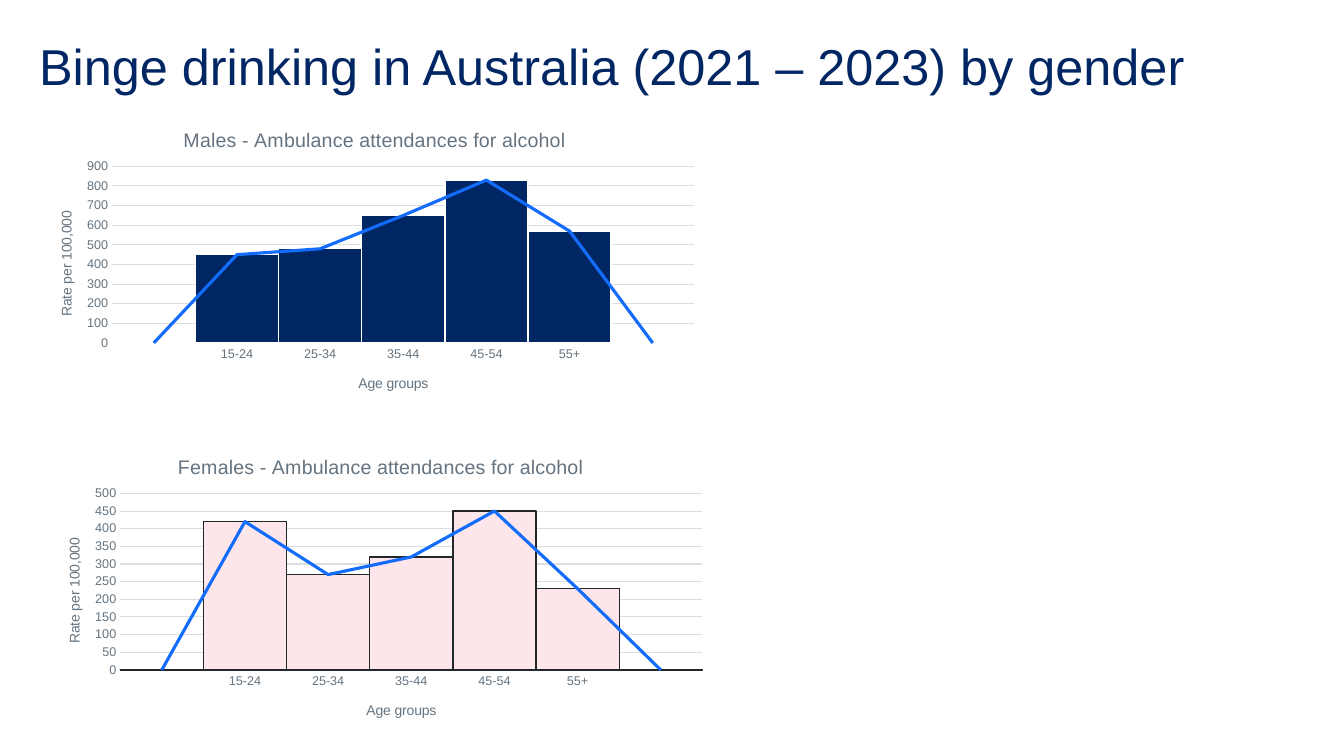
"""Slide with two histograms, each with its frequency polygon, of alcohol attendances by gender."""
from lxml.etree import SubElement
from pptx import Presentation
from pptx.chart.data import CategoryChartData
from pptx.dml.color import RGBColor
from pptx.enum.chart import XL_CHART_TYPE as ChartType, XL_MARKER_STYLE as Marker
from pptx.enum.chart import XL_TICK_MARK as Tick
from pptx.enum.text import MSO_ANCHOR as Anchor
from pptx.oxml.ns import qn
from pptx.util import Pt

PX = 9144000 / 1008
NAVY = RGBColor(0x00, 0x26, 0x64)
BLUE = RGBColor(0x14, 0x6C, 0xFD)
PINK = RGBColor(0xFD, 0xE6, 0xEA)
INK = RGBColor(0x22, 0x27, 0x2B)
GREY = RGBColor(0x65, 0x74, 0x80)
RULE = RGBColor(0xDB, 0xDF, 0xE2)
WHITE = RGBColor(0xFF, 0xFF, 0xFF)
FONT = "Arial"
AGE_GROUPS = ["", "15-24", "25-34", "35-44", "45-54", "55+", ""]


def write_text(frame, text, size=10, color=GREY, spacing=None):
    frame.text = text
    paragraph = frame.paragraphs[0]
    paragraph.line_spacing = spacing
    font = paragraph.runs[0].font
    font.name, font.size, font.bold = FONT, Pt(size), False
    font.color.rgb = color


def place(parent, **fractions):
    layout = parent.find(qn("c:layout"))
    if layout is None:
        layout = SubElement(parent, qn("c:layout"))
        parent.insert(0, layout)
    manual = SubElement(layout, qn("c:manualLayout"))
    if "w" in fractions:
        SubElement(manual, qn("c:layoutTarget"), val="inner")
    for side in "xy":
        SubElement(manual, qn(f"c:{side}Mode"), val="edge")
    for side, fraction in fractions.items():
        SubElement(manual, qn(f"c:{side}"), val=str(fraction))


deck = Presentation()
deck.slide_width, deck.slide_height = round(1344 * PX), round(756 * PX)
slide = deck.slides.add_slide(deck.slide_layouts[6])

heading = slide.shapes.add_textbox(*(round(n * PX) for n in (39, 39, 1266, 60))).text_frame
heading.word_wrap = True
heading.vertical_anchor = Anchor.MIDDLE
heading.margin_left = heading.margin_right = heading.margin_top = heading.margin_bottom = 0
write_text(heading, "Binge drinking in Australia (2021 – 2023) by gender", size=36, color=NAVY, spacing=0.9)

genders = [
    ("Males", (31, 109, 677, 302), [0, 450, 480, 650, 830, 570, 0], 900, 100, NAVY, WHITE, 0.22),
    ("Females", (39, 436, 677, 302), [0, 420, 270, 320, 450, 230, 0], 500, 50, PINK, INK, 0.2),
]
for gender, box, rates, top_rate, step, fill, outline, title_x in genders:
    data = CategoryChartData()
    data.categories = AGE_GROUPS
    for name in ("Series 1", "Series 2"):
        data.add_series(name, rates)
    chart = slide.shapes.add_chart(
        ChartType.COLUMN_CLUSTERED, *(round(n * PX) for n in box), data).chart
    chart.has_legend = False
    chart.font.name, chart.font.size = FONT, Pt(10)
    chart.font.color.rgb = INK

    histogram = chart.plots[0]
    histogram.gap_width, histogram.overlap = 0, 0
    histogram.vary_by_categories = False

    chart_space = chart.element
    bar_group = chart_space.find(".//" + qn("c:barChart"))
    polygon_series = bar_group.findall(qn("c:ser"))[1]
    for bar_only in polygon_series.findall(qn("c:invertIfNegative")):
        polygon_series.remove(bar_only)
    plot_area = bar_group.getparent()
    line_group = SubElement(plot_area, qn("c:lineChart"))
    bar_group.addnext(line_group)
    SubElement(line_group, qn("c:grouping"), val="standard")
    SubElement(line_group, qn("c:varyColors"), val="0")
    line_group.append(polygon_series)
    SubElement(line_group, qn("c:marker"), val="1")
    for axis_id in bar_group.findall(qn("c:axId")):
        SubElement(line_group, qn("c:axId"), val=axis_id.get("val"))
    place(plot_area, x=0.12, y=0.19, w=0.86, h=0.585)

    bars = chart.plots[0].series[0].format
    bars.fill.solid()
    bars.fill.fore_color.rgb = fill
    bars.line.color.rgb = outline
    bars.line.width = Pt(1)
    polygon = chart.plots[1].series[0]
    polygon.smooth = False
    polygon.marker.style = Marker.NONE
    polygon.format.line.color.rgb = BLUE
    polygon.format.line.width = Pt(2.25)

    ages, rate_axis = chart.category_axis, chart.value_axis
    rate_axis.minimum_scale, rate_axis.maximum_scale, rate_axis.major_unit = 0, top_rate, step
    for axis in (ages, rate_axis):
        axis.major_tick_mark = axis.minor_tick_mark = Tick.NONE
        axis.tick_labels.font.name, axis.tick_labels.font.size = FONT, Pt(9)
        axis.tick_labels.font.color.rgb = GREY
    rate_axis.format.line.fill.background()
    for rule in (ages.format.line, rate_axis.major_gridlines.format.line):
        rule.color.rgb = RULE
        rule.width = Pt(0.75)

    titles = [
        (chart.chart_title, f"{gender} - Ambulance attendances for alcohol", 14, title_x, 0.05),
        (ages.axis_title, "Age groups", 10, 0.48, 0.87),
        (rate_axis.axis_title, "Rate per 100,000", 10, 0.035, 0.33),
    ]
    for title, text, size, x, y in titles:
        write_text(title.text_frame, text, size=size)
        place(title.element, x=x, y=y)
    rate_axis.axis_title.element.find(".//" + qn("a:bodyPr")).set("rot", "-5400000")

deck.save("out.pptx")
